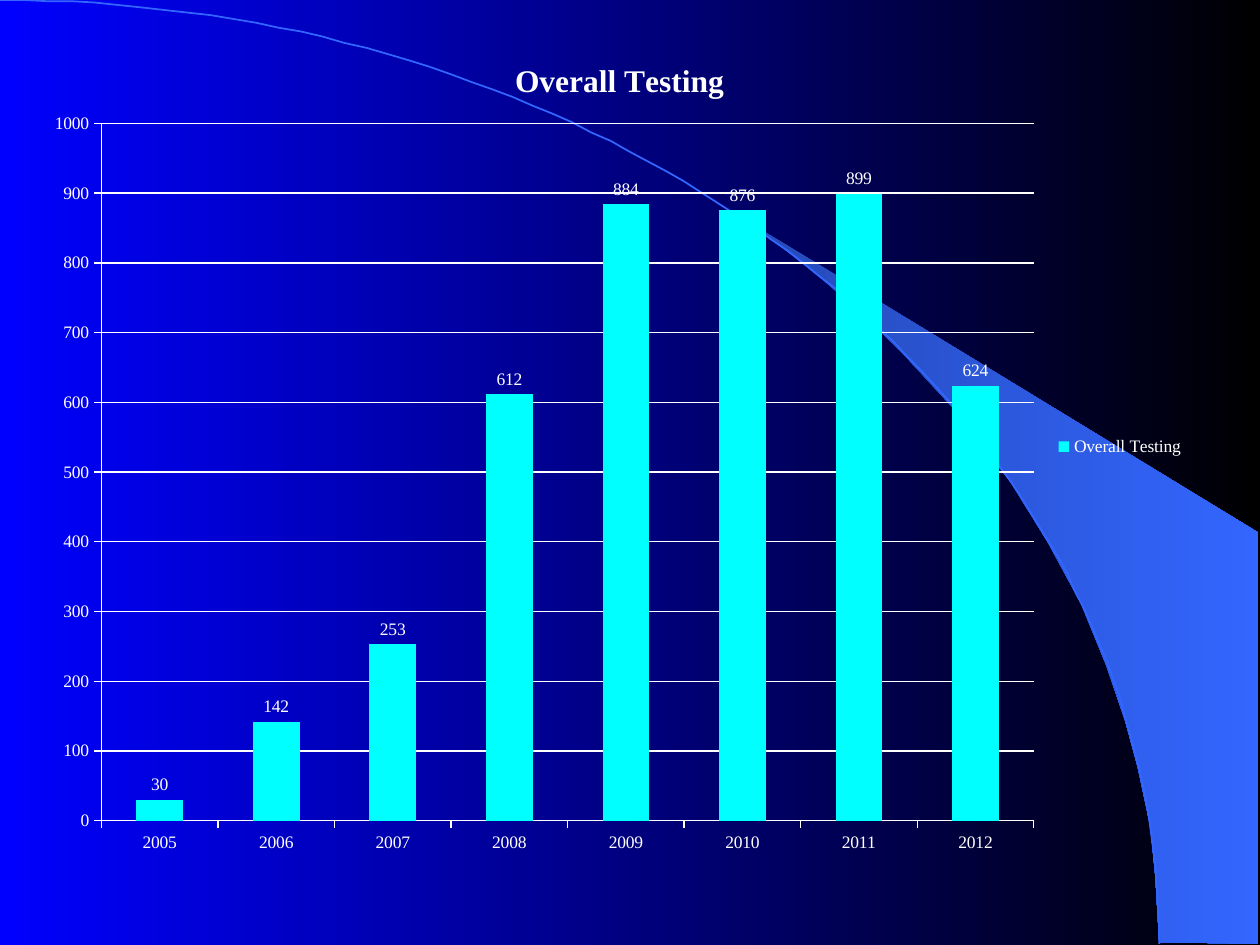
import pptx
import pptx.chart.data
import pptx.dml.color
import pptx.enum.chart
import pptx.oxml
import pptx.oxml.ns
import pptx.util

W, H = 10, 7.5
FONT = "Times New Roman"
WHITE, CYAN, BLUE = "FFFFFF", "00FFFF", "3366FF"
UNIT = 9144  # freeform points are in hundredths of an inch

YEARS = ["2005", "2006", "2007", "2008", "2009", "2010", "2011", "2012"]
TESTS = [30, 142, 253, 612, 884, 876, 899, 624]

SAIL = [(9.2, 7.48), (9.99, 7.49), (9.99, 4.23), (5.89, 1.73), (6.24, 1.99),
        (6.53, 2.22), (6.85, 2.5), (7.16, 2.8), (7.62, 3.3), (8.03, 3.84),
        (8.32, 4.31), (8.58, 4.79), (8.78, 5.28), (8.93, 5.72), (9.03, 6.09),
        (9.13, 6.56), (9.17, 6.96)]


def rgb(value):
    return pptx.dml.color.RGBColor.from_string(value)


def set_gradient(fill, *colors):
    fill.gradient()
    fill.gradient_angle = 0
    for position, (stop, color) in enumerate(zip(fill.gradient_stops, colors)):
        stop.position = position
        stop.color.rgb = rgb(color)


def set_font(font, size, bold=False):
    font.name, font.size, font.bold = FONT, pptx.util.Pt(size), bold
    font.color.rgb = rgb(WHITE)


def set_line(line, color, width):
    line.color.rgb = rgb(color)
    line.width = pptx.util.Pt(width)


def add_outline(s, points, close):
    points = [(x * 100, y * 100) for x, y in points]
    builder = s.shapes.build_freeform(*points[0], scale=UNIT)
    builder.add_line_segments(points[1:], close=close)
    sp = builder.convert_to_shape()
    sp.shadow.inherit = False
    return sp


def arc_points(width, height, steps=80):
    """Cubic curve from the top left corner to the bottom right corner."""
    controls = [(0, 0), (0.552 * width, 0), (width, 0.447 * height), (width, height)]
    for i in range(steps + 1):
        t = i / steps
        weights = [(1 - t) ** 3, 3 * t * (1 - t) ** 2, 3 * t * t * (1 - t), t ** 3]
        yield tuple(sum(w * c[axis] for w, c in zip(weights, controls))
                    for axis in (0, 1))


def add_backdrop(s):
    set_gradient(s.background.fill, "0000FF", "000000")
    # Sail on the right
    sail = add_outline(s, SAIL, close=True)
    set_gradient(sail.fill, "2449B6", BLUE)
    sail.line.fill.background()
    # Long arc
    arc = add_outline(s, list(arc_points(0.92 * W, 7.49)), close=False)
    arc.fill.background()
    set_line(arc.line, BLUE, 1)


def set_layout(parent, inner=False, **shares):
    """Place a chart part by shares of the chart's size."""
    for old in parent.findall(pptx.oxml.ns.qn("c:layout")):
        parent.remove(old)
    target = '<c:layoutTarget val="inner"/>' if inner else ""
    modes = "".join(f'<c:{k}Mode val="edge"/>' for k in "xy")
    values = "".join(f'<c:{k} val="{v}"/>' for k, v in shares.items())
    layout = pptx.oxml.parse_xml(
        f'<c:layout {pptx.oxml.ns.nsdecls("c")}><c:manualLayout>'
        f'{target}{modes}{values}</c:manualLayout></c:layout>')
    texts = parent.findall(pptx.oxml.ns.qn("c:tx"))
    parent.insert(len(texts), layout)


def add_testing_chart(s, left, top, width, height):
    data = pptx.chart.data.CategoryChartData()
    data.categories = YEARS
    data.add_series("Overall Testing", TESTS)
    chart = s.shapes.add_chart(
        pptx.enum.chart.XL_CHART_TYPE.COLUMN_CLUSTERED,
        *(pptx.util.Inches(v) for v in (left, top, width, height)), data).chart
    set_font(chart.font, 10)

    # Title and legend
    chart.has_title = True
    tf = chart.chart_title.text_frame
    r = tf.paragraphs[0].add_run()
    r.text = "Overall Testing"
    set_font(r.font, 18, bold=True)
    title = chart.chart_title
    title.include_in_layout = False
    set_layout(title._element, x=0.41, y=0.04)
    chart.has_legend = True
    chart.legend.position = pptx.enum.chart.XL_LEGEND_POSITION.RIGHT
    chart.legend.include_in_layout = False
    set_font(chart.legend.font, 10)

    # Columns and their values
    plot = chart.plots[0]
    plot.gap_width = 150
    plot.vary_by_categories = False
    fill = plot.series[0].format.fill
    fill.solid()
    fill.fore_color.rgb = rgb(CYAN)
    plot.has_data_labels = True
    labels = plot.data_labels
    labels.show_value = True
    labels.position = pptx.enum.chart.XL_LABEL_POSITION.OUTSIDE_END
    set_font(labels.font, 10)

    # Axes
    for axis in (chart.category_axis, chart.value_axis):
        axis.major_tick_mark = pptx.enum.chart.XL_TICK_MARK.OUTSIDE
        set_font(axis.tick_labels.font, 10)
        set_line(axis.format.line, WHITE, 0.75)
    axis = chart.value_axis
    axis.minimum_scale, axis.maximum_scale, axis.major_unit = 0, 1000, 100
    axis.has_major_gridlines = True
    set_line(axis.major_gridlines.format.line, WHITE, 0.75)
    plot_area = plot._element.getparent()
    set_layout(plot_area, inner=True, x=0.06, y=0.12, w=0.8, h=0.82)


def main():
    prs = pptx.Presentation()
    prs.slide_width, prs.slide_height = pptx.util.Inches(W), pptx.util.Inches(H)
    s = prs.slides.add_slide(prs.slide_layouts[6])
    add_backdrop(s)
    add_testing_chart(s, 0.25, 0.17, 9.25, 6.75)
    prs.save("out.pptx")


if __name__ == "__main__":
    main()
